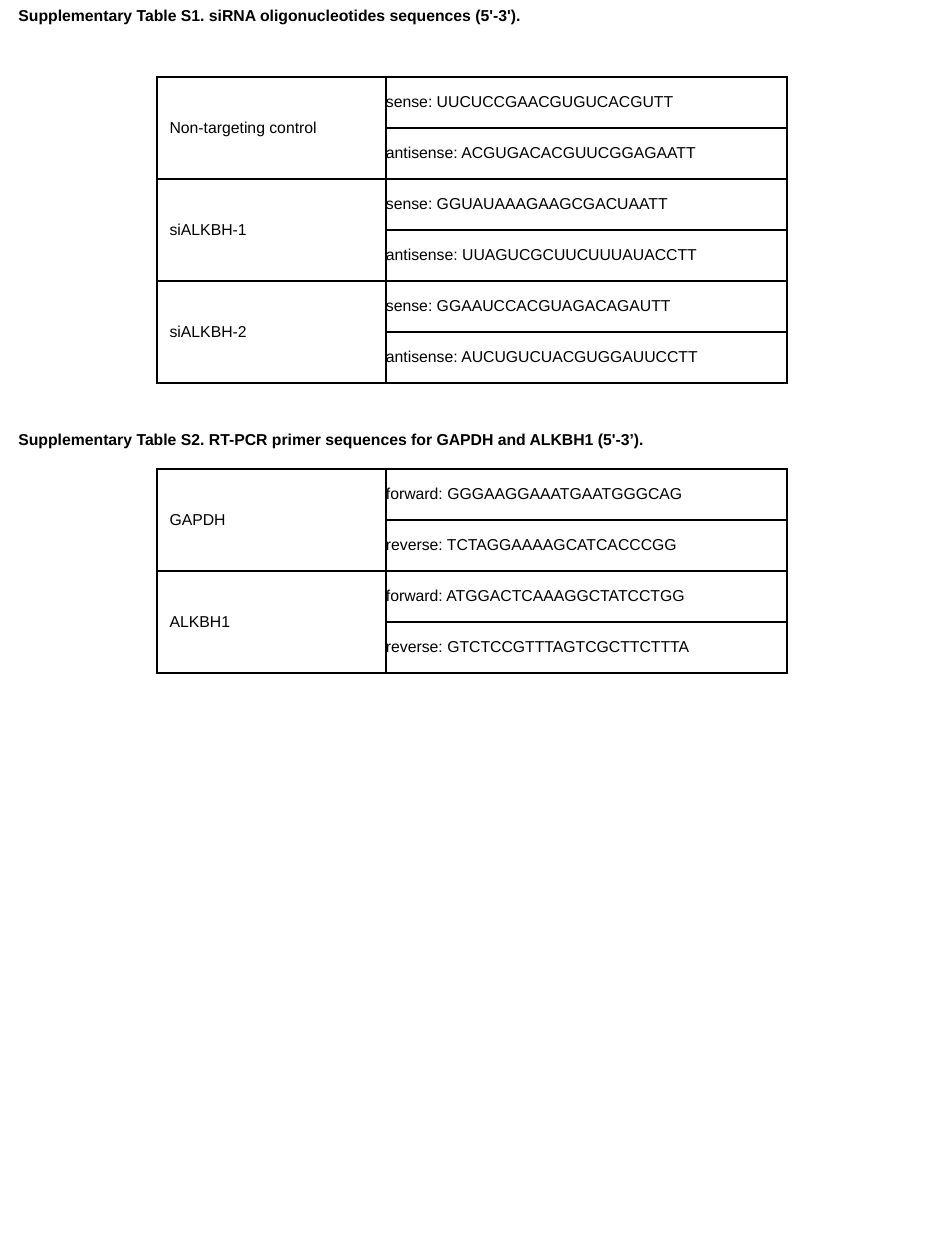
from dataclasses import dataclass

import pptx
import pptx.dml.color
import pptx.enum.text
import pptx.oxml
import pptx.oxml.ns
import pptx.util

SCALE = 914400 / 126  # EMU in one px


def px(n: int) -> int:
    return round(n * SCALE)


@dataclass(frozen=True)
class Theme:
    font: str = "Arial"
    ink: str = "000000"
    size: int = 9
    line: int = 1


@dataclass(frozen=True)
class Title:
    text: str
    top: int
    width: int


@dataclass(frozen=True)
class Group:
    name: str
    seqs: tuple[str, str]


@dataclass(frozen=True)
class Grid:
    top: int
    groups: tuple[Group, ...]


THEME = Theme()
COLS = (229, 401)
ROW = 51
LEFT = 157

TITLES = (
    Title("Supplementary Table S1. siRNA oligonucleotides sequences (5'-3').", 0, 536),
    Title("Supplementary Table S2. RT-PCR primer sequences for GAPDH and ALKBH1 (5'-3’).", 424, 730),
)
GRIDS = (
    Grid(77, (
        Group("Non-targeting control",
              ("sense: UUCUCCGAACGUGUCACGUTT", "antisense: ACGUGACACGUUCGGAGAATT")),
        Group("siALKBH-1",
              ("sense: GGUAUAAAGAAGCGACUAATT", "antisense: UUAGUCGCUUCUUUAUACCTT")),
        Group("siALKBH-2",
              ("sense: GGAAUCCACGUAGACAGAUTT", "antisense: AUCUGUCUACGUGGAUUCCTT")),
    )),
    Grid(469, (
        Group("GAPDH",
              ("forward: GGGAAGGAAATGAATGGGCAG", "reverse: TCTAGGAAAAGCATCACCCGG")),
        Group("ALKBH1",
              ("forward: ATGGACTCAAAGGCTATCCTGG", "reverse: GTCTCCGTTTAGTCGCTTCTTTA")),
    )),
)


def set_font(para, bold: bool = False) -> None:
    font = para.font
    font.name = THEME.font
    font.size = pptx.util.Pt(THEME.size)
    font.bold = bold
    font.color.rgb = pptx.dml.color.RGBColor.from_string(THEME.ink)


def add_title(slide, title: Title) -> None:
    box = slide.shapes.add_textbox(px(6), px(title.top), px(title.width), px(32))
    frame = box.text_frame
    frame.word_wrap = True
    frame.auto_size = pptx.enum.text.MSO_AUTO_SIZE.SHAPE_TO_FIT_TEXT
    frame.text = title.text
    set_font(frame.paragraphs[0], bold=True)


def style_cell(cell) -> None:
    cell.vertical_anchor = pptx.enum.text.MSO_ANCHOR.MIDDLE
    set_font(cell.text_frame.paragraphs[0])
    # Borders come before the fill in the cell properties
    props = cell._tc.get_or_add_tcPr()
    for side in ("lnL", "lnR", "lnT", "lnB"):
        props.append(pptx.oxml.parse_xml(
            f'<a:{side} {pptx.oxml.ns.nsdecls("a")} w="{pptx.util.Pt(THEME.line)}">'
            f'<a:solidFill><a:srgbClr val="{THEME.ink}"/></a:solidFill></a:{side}>'))
    cell.fill.background()


def add_grid(slide, grid: Grid) -> None:
    rows = 2 * len(grid.groups)
    shape = slide.shapes.add_table(
        rows, len(COLS), px(LEFT), px(grid.top), px(sum(COLS)), px(rows * ROW))
    table = shape.table
    table.first_row = table.horz_banding = False
    for col, width in zip(table.columns, COLS):
        col.width = px(width)
    for row in table.rows:
        row.height = px(ROW)

    # Each group has one name beside two sequences
    for i, group in enumerate(grid.groups):
        head = table.cell(2 * i, 0)
        head.merge(table.cell(2 * i + 1, 0))
        head.text = group.name
        for j, seq in enumerate(group.seqs):
            cell = table.cell(2 * i + j, 1)
            cell.text = seq
            cell.margin_left = cell.margin_right = 0
            cell.margin_top = cell.margin_bottom = 0
    for cell in table.iter_cells():
        style_cell(cell)


def main() -> None:
    deck = pptx.Presentation()
    deck.slide_width, deck.slide_height = px(945), px(1260)
    slide = deck.slides.add_slide(deck.slide_layouts[6])
    for title, grid in zip(TITLES, GRIDS):
        add_title(slide, title)
        add_grid(slide, grid)
    deck.save("out.pptx")


if __name__ == "__main__":
    main()
